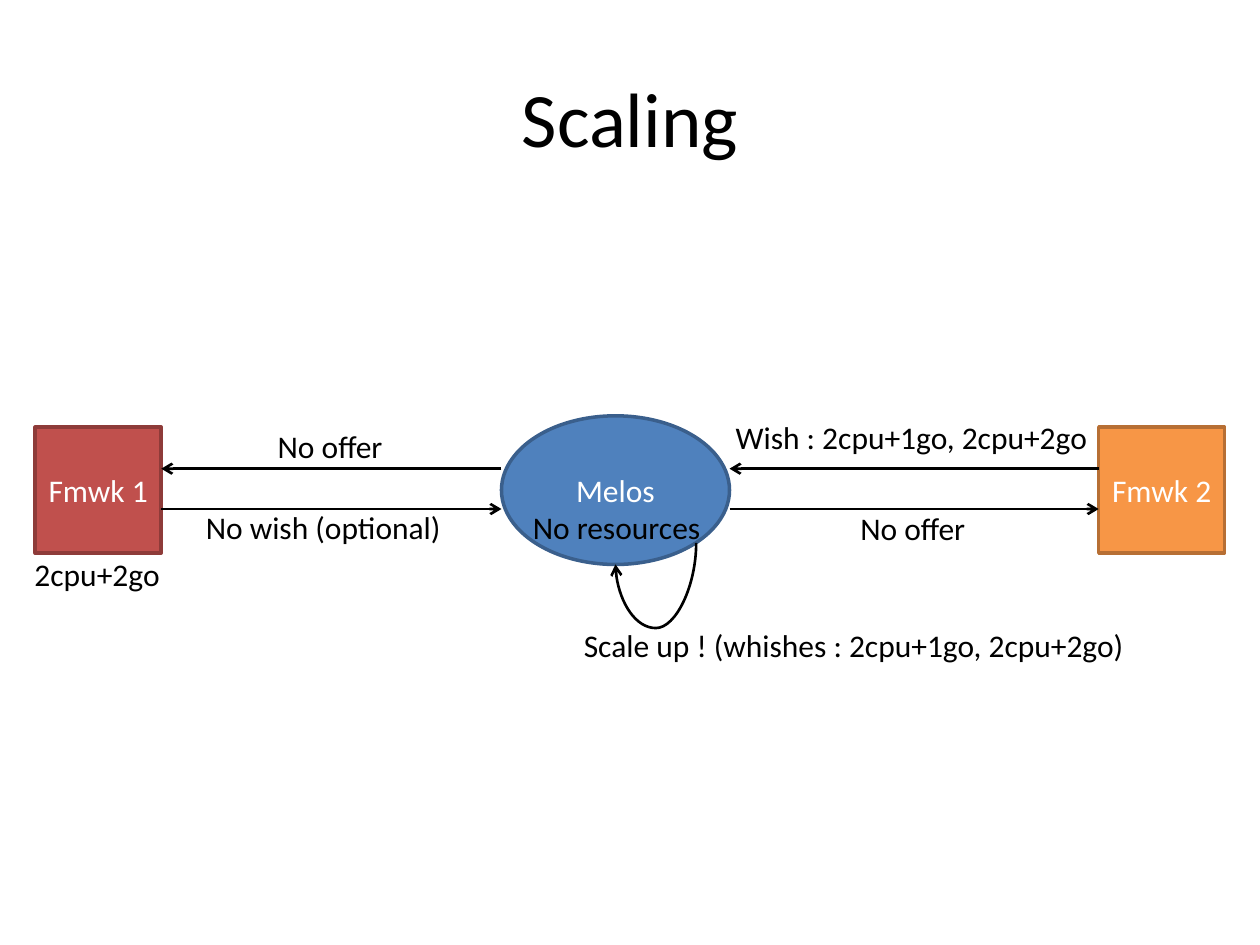
from collections import namedtuple

from pptx import Presentation
from pptx import util as u
from pptx.dml.color import RGBColor
from pptx.enum import shapes, text
from pptx.oxml import ns
from lxml import etree

BLACK = RGBColor(0x00, 0x00, 0x00)
WHITE = RGBColor(0xFF, 0xFF, 0xFF)
BLUE, BLUE_EDGE = RGBColor(0x4F, 0x81, 0xBD), RGBColor(0x3A, 0x5F, 0x8C)
RED, RED_EDGE = RGBColor(0xC0, 0x50, 0x4D), RGBColor(0x8E, 0x3B, 0x39)
ORANGE, ORANGE_EDGE = RGBColor(0xF7, 0x96, 0x46), RGBColor(0xB7, 0x6F, 0x34)

COLUMNS, ROWS = 100, 75
WIDTH, HEIGHT = u.Inches(10), u.Inches(7.5)
LABEL_ROWS = 4
BODY = {"name": "Calibri", "size": u.Pt(18)}
HEADING = {"name": "Calibri", "size": u.Pt(44)}

Box = namedtuple("Box", "left top width height")


def columns(count):
    """Turn grid columns into a length."""
    return u.Emu(round(WIDTH * count / COLUMNS))


def rows(count):
    """Turn grid rows into a length."""
    return u.Emu(round(HEIGHT * count / ROWS))


def place(box):
    """Turn a grid box into left, top, width and height."""
    return columns(box.left), rows(box.top), columns(box.width), rows(box.height)


def write(frame, words, values, color, align):
    """Write one formatted paragraph into a text frame."""
    paragraph = frame.paragraphs[0]
    paragraph.alignment = align
    run = paragraph.add_run()
    run.text = words
    for name, value in values.items():
        setattr(run.font, name, value)
    run.font.color.rgb = color


def add_title(slide, box, words):
    """Move and format the title placeholder."""
    title = slide.shapes.title
    title.left, title.top, title.width, title.height = place(box)
    title.text_frame.vertical_anchor = text.MSO_ANCHOR.MIDDLE
    write(title.text_frame, words, HEADING, BLACK, text.PP_ALIGN.CENTER)


def add_node(slide, kind, box, words, fill, edge):
    """Add a filled shape with a centred name."""
    shape = slide.shapes.add_shape(kind, *place(box))
    shape.shadow.inherit = False
    shape.fill.solid()
    shape.fill.fore_color.rgb = fill
    shape.line.color.rgb = edge
    shape.line.width = u.Pt(2)
    shape.text_frame.vertical_anchor = text.MSO_ANCHOR.MIDDLE
    write(shape.text_frame, words, BODY, WHITE, text.PP_ALIGN.CENTER)


def add_label(slide, center, top, width, words):
    """Add a one-line label around a centre column."""
    box = Box(center - width / 2, top, width, LABEL_ROWS)
    frame = slide.shapes.add_textbox(*place(box)).text_frame
    frame.word_wrap = False
    frame.auto_size = text.MSO_AUTO_SIZE.SHAPE_TO_FIT_TEXT
    write(frame, words, BODY, BLACK, text.PP_ALIGN.LEFT)


def add_arrow(slide, kind, start, end):
    """Add a black connector with an open arrowhead at its end."""
    connector = slide.shapes.add_connector(
        kind, columns(start[0]), rows(start[1]), columns(end[0]), rows(end[1]))
    connector.line.color.rgb = BLACK
    connector.line.width = u.Pt(1.5)
    etree.SubElement(connector.line._get_or_add_ln(), ns.qn("a:tailEnd"), type="arrow")
    etree.SubElement(connector._element.spPr, ns.qn("a:effectLst"))
    return connector


def add_exchange(slide, box):
    """Add a leftward arrow on the top side and a rightward one on the bottom."""
    right, bottom = box.left + box.width, box.top + box.height
    straight = shapes.MSO_CONNECTOR.STRAIGHT
    add_arrow(slide, straight, (right, box.top), (box.left, box.top))
    add_arrow(slide, straight, (box.left, bottom), (right, bottom))


def add_loop(slide, box, depth):
    """Add a curve from the box's top right, dipping below, to its bottom left."""
    middle, center = box.left + box.width / 2, box.top + box.height / 2
    half_width, half_height = box.height / 2, box.width / 2
    loop = add_arrow(slide, shapes.MSO_CONNECTOR.CURVE,
                     (middle - half_width, center - half_height),
                     (middle + half_width, center + half_height))
    properties = loop._element.spPr
    properties.find(ns.qn("a:xfrm")).set("rot", str(90 * 60000))
    geometry = properties.find(ns.qn("a:prstGeom"))
    guides = geometry.find(ns.qn("a:avLst"))
    if guides is None:
        guides = etree.SubElement(geometry, ns.qn("a:avLst"))
    etree.SubElement(guides, ns.qn("a:gd"), name="adj1",
                     fmla=f"val {round(depth / box.height * 100000)}")


def add_cluster(slide, box):
    """Add the resource manager with its state and its scaling loop."""
    center, bottom = box.left + box.width / 2, box.top + box.height
    add_node(slide, shapes.MSO_SHAPE.OVAL, box, "Melos", BLUE, BLUE_EDGE)
    add_label(slide, center + 0.2, bottom - 5, 15.5, "No resources")
    add_loop(slide, Box(center, bottom - 1.7, 6.4, 1.7), 6.75)
    add_label(slide, center + 19.5, bottom + 4.4, 46, "Scale up ! (whishes : 2cpu+1go, 2cpu+2go)")


def add_framework(slide, box, words, fill, edge, usage=None):
    """Add a framework square, with its usage below when it has one."""
    add_node(slide, shapes.MSO_SHAPE.RECTANGLE, box, words, fill, edge)
    if usage:
        add_label(slide, box.left + box.width / 2, box.top + box.height - 0.3, 12.1, usage)


def main():
    """Build the scaling slide."""
    presentation = Presentation()
    presentation.slide_width, presentation.slide_height = WIDTH, HEIGHT
    slide = presentation.slides.add_slide(presentation.slide_layouts[5])

    cluster = Box(39.8, 33, 18.1, 11.8)
    first = Box(2.8, 33.9, 10, 10)
    second = first._replace(left=COLUMNS - first.left - first.width)
    cluster_right, first_right = cluster.left + cluster.width, first.left + first.width
    left_link = Box(first_right, 37.2, cluster.left - first_right, 3.2)
    right_link = left_link._replace(left=cluster_right, width=second.left - cluster_right)
    left_center = left_link.left + left_link.width / 2
    right_center = right_link.left + right_link.width / 2

    add_title(slide, Box(5, 3, 90, 12.5), "Scaling")
    add_cluster(slide, cluster)
    add_framework(slide, first, "Fmwk 1", RED, RED_EDGE, "2cpu+2go")
    add_framework(slide, second, "Fmwk 2", ORANGE, ORANGE_EDGE)
    for link in (left_link, right_link):
        add_exchange(slide, link)
    for label in (
        (left_center, 33.4, 10.5, "No offer"),
        (left_center - 0.5, 39.8, 20.9, "No wish (optional)"),
        (right_center, 32.7, 30.3, "Wish : 2cpu+1go, 2cpu+2go"),
        (right_center, 39.9, 10.5, "No offer"),
    ):
        add_label(slide, *label)
    presentation.save("out.pptx")


if __name__ == "__main__":
    main()
